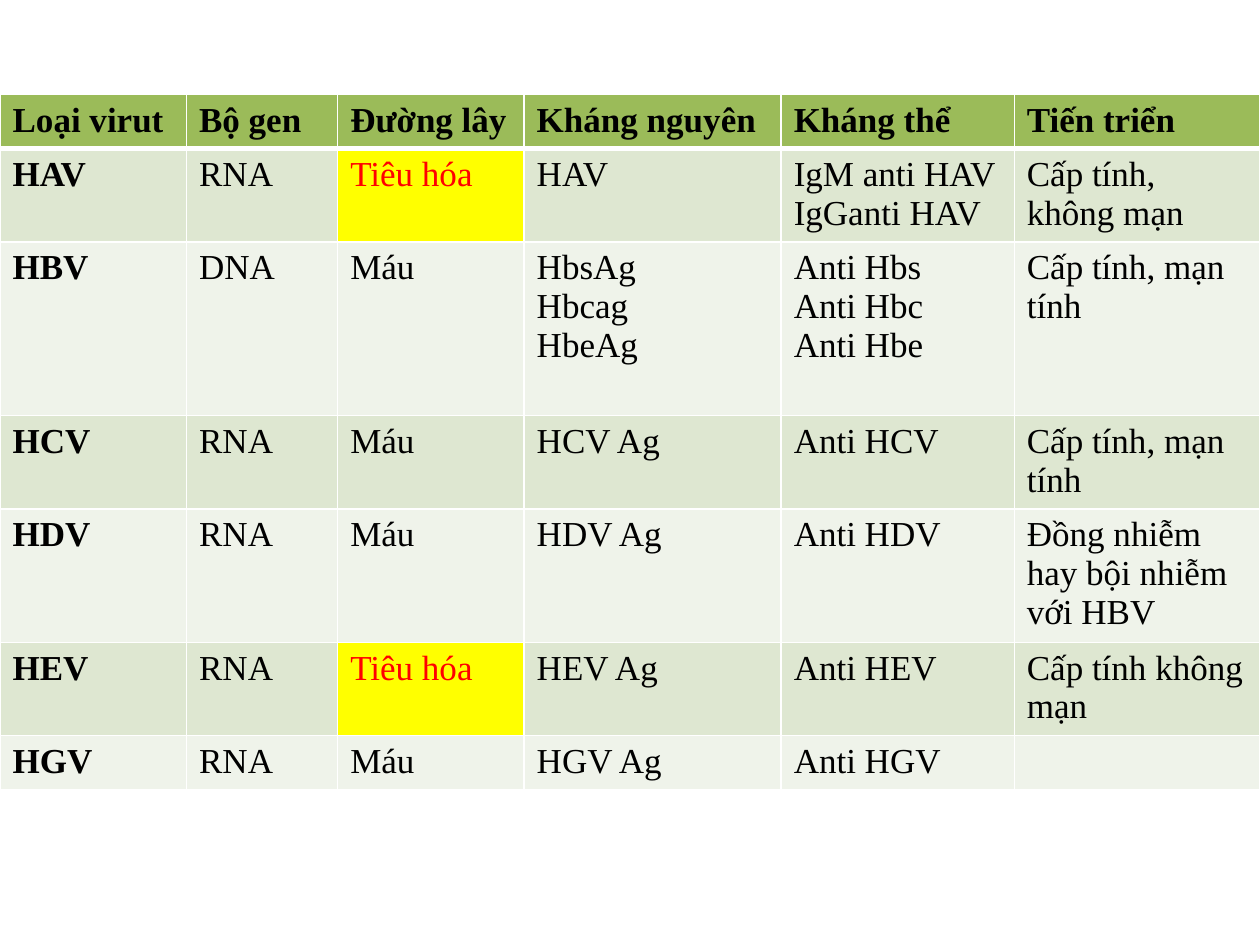
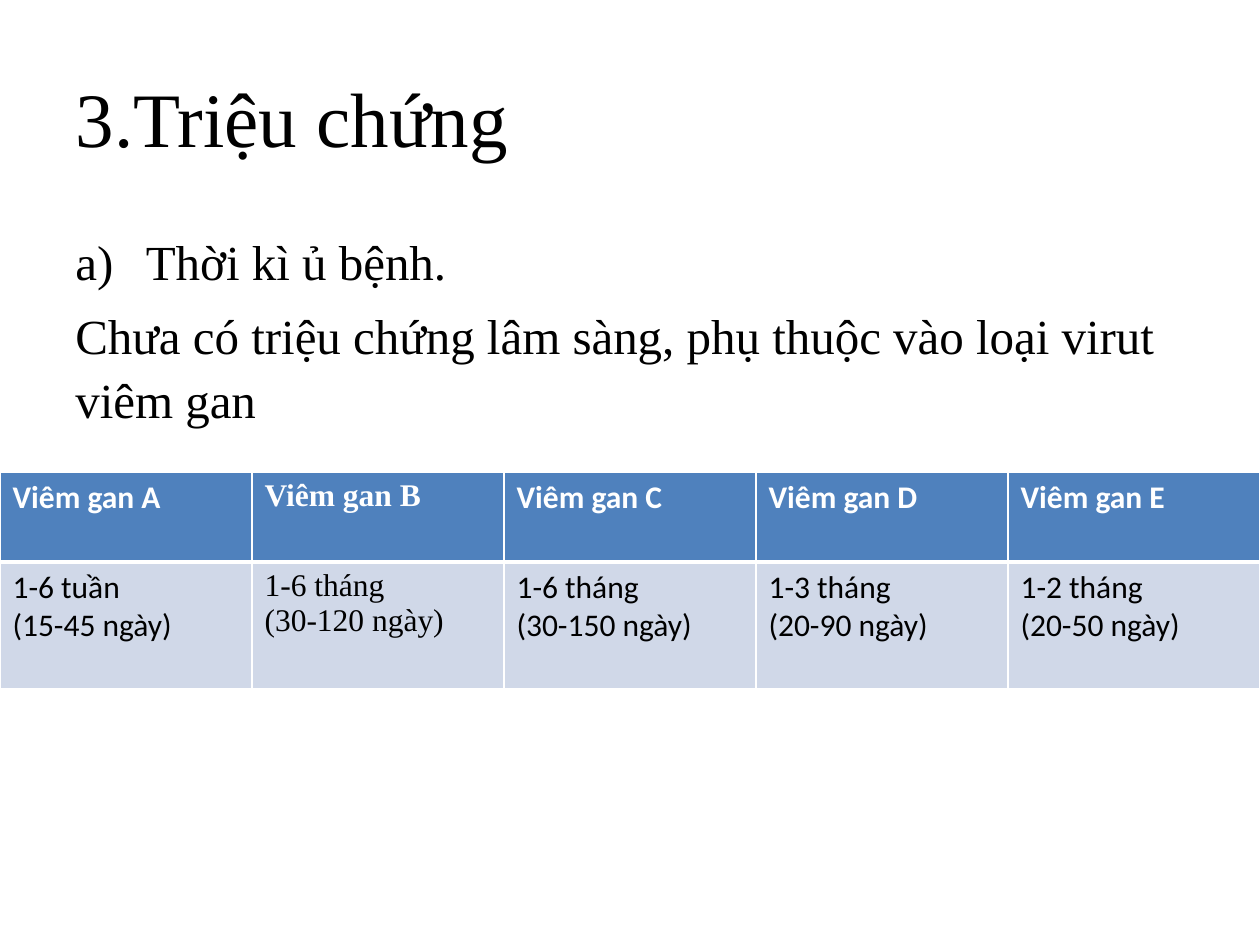
from lxml.etree import SubElement
from pptx import Presentation
from pptx.dml.color import RGBColor
from pptx.enum.text import MSO_ANCHOR, PP_ALIGN
from pptx.oxml import parse_xml
from pptx.oxml.ns import nsdecls, qn
from pptx.util import Inches, Pt

COLORS = {
    "text": "000000", "white": "FFFFFF", "alert": "FF0000", "highlight": "FFFF00",
    "green": "9BBB59", "green_dark_band": "DEE7D1", "green_light_band": "EFF3EA",
    "blue": "4F81BD", "blue_band": "D0D8E8",
}
SERIF, SANS = "Times New Roman", "Calibri"


def style_text(frame, color, **font_values):
    for paragraph in frame.paragraphs:
        for run in paragraph.runs:
            for attribute, value in font_values.items():
                setattr(run.font, attribute, value)
            run.font.color.rgb = RGBColor.from_string(COLORS[color])


def add_grid(slide, top, widths, heights, rows, fills):
    frame = slide.shapes.add_table(len(rows), len(widths), 0, Inches(top),
                                   Inches(10), Inches(sum(heights)))
    grid = frame.table
    for column, width in zip(grid.columns, widths):
        column.width = Inches(width)
    for row_index, (row, height, fill) in enumerate(zip(rows, heights, fills)):
        grid.rows[row_index].height = Inches(height)
        edges = {"L": 1, "R": 1, "T": 3 if row_index == 1 else 1, "B": 3 if row_index == 0 else 1}
        for column_index, text in enumerate(row):
            cell = grid.cell(row_index, column_index)
            cell.text = text
            cell.fill.solid()
            cell.fill.fore_color.rgb = RGBColor.from_string(COLORS[fill])
            properties = cell._tc.get_or_add_tcPr()
            for position, (side, points) in enumerate(edges.items()):
                properties.insert(position, parse_xml(
                    f'<a:ln{side} {nsdecls("a")} w="{Pt(points)}"><a:solidFill>'
                    f'<a:srgbClr val="{COLORS["white"]}"/></a:solidFill></a:ln{side}>'))
    return grid


deck = Presentation()
deck.slide_width, deck.slide_height = Inches(10), Inches(7.5)

virus_slide = deck.slides.add_slide(deck.slide_layouts[6])
virus_rows = [
    ["Loại virut", "Bộ gen", "Đường lây", "Kháng nguyên", "Kháng thể", "Tiến triển"],
    ["HAV", "RNA", "Tiêu hóa", "HAV", "IgM anti HAV\nIgGanti HAV", "Cấp tính, không mạn"],
    ["HBV", "DNA", "Máu", "HbsAg\nHbcag\nHbeAg", "Anti Hbs\nAnti Hbc\nAnti Hbe", "Cấp tính, mạn tính"],
    ["HCV", "RNA", "Máu", "HCV Ag", "Anti HCV", "Cấp tính, mạn tính"],
    ["HDV", "RNA", "Máu", "HDV Ag", "Anti HDV", "Đồng nhiễm hay bội nhiễm với HBV"],
    ["HEV", "RNA", "Tiêu hóa", "HEV Ag", "Anti HEV", "Cấp tính không mạn"],
    ["HGV", "RNA", "Máu", "HGV Ag", "Anti HGV", ""],
]
virus_grid = add_grid(virus_slide, 0.75, [1.48, 1.2, 1.48, 2.04, 1.85, 1.95],
                      [0.43, 0.74, 1.38, 0.74, 1.06, 0.74, 0.43], virus_rows,
                      ["green"] + ["green_dark_band", "green_light_band"] * 3)
for row_index, row in enumerate(virus_rows):
    for column_index, text in enumerate(row):
        cell = virus_grid.cell(row_index, column_index)
        digestive = text == "Tiêu hóa"
        style_text(cell.text_frame, "alert" if digestive else "text", name=SERIF,
                   size=Pt(20), bold=row_index == 0 or column_index == 0)
        if digestive:
            cell.fill.fore_color.rgb = RGBColor.from_string(COLORS["highlight"])

symptom_slide = deck.slides.add_slide(deck.slide_layouts[5])
heading = symptom_slide.shapes.title
heading.left, heading.top, heading.width, heading.height = map(Inches, (0.5, 0.3, 9, 1.25))
heading.text_frame.text = "3.Triệu chứng"
heading.text_frame.vertical_anchor = MSO_ANCHOR.MIDDLE
heading.text_frame.paragraphs[0].alignment = PP_ALIGN.LEFT
style_text(heading.text_frame, "text", name=SERIF, size=Pt(44))

incubation = symptom_slide.shapes.add_textbox(*map(Inches, (0.5, 1.75, 9, 4.95))).text_frame
incubation.word_wrap = True
incubation.text = ("Thời kì ủ bệnh.\n"
                   "Chưa có triệu chứng lâm sàng, phụ thuộc vào loại virut viêm gan")
style_text(incubation, "text", name=SERIF, size=Pt(28))
for paragraph in incubation.paragraphs:
    paragraph.line_spacing = 1.09
    paragraph.space_before = Pt(5.6)
lettered = incubation.paragraphs[0]._p.get_or_add_pPr()
lettered.set("marL", str(Inches(0.56)))
lettered.set("indent", str(-Inches(0.56)))
SubElement(lettered, qn("a:buAutoNum"), type="alphaLcParenR")

period_rows = [
    [f"Viêm gan {letter}" for letter in "ABCDE"],
    ["1-6 tuần\n(15-45 ngày)", "1-6 tháng\n(30-120 ngày)", "1-6 tháng\n(30-150 ngày)",
     "1-3 tháng\n(20-90 ngày)", "1-2 tháng\n(20-50 ngày)"],
]
period_grid = add_grid(symptom_slide, 3.75, [2] * 5, [0.71, 1.01], period_rows, ["blue", "blue_band"])
for row_index, color in enumerate(["white", "text"]):
    for column_index in range(5):
        style_text(period_grid.cell(row_index, column_index).text_frame, color,
                   name=SERIF if column_index == 1 else SANS, size=Pt(18), bold=row_index == 0)

deck.save("out.pptx")
